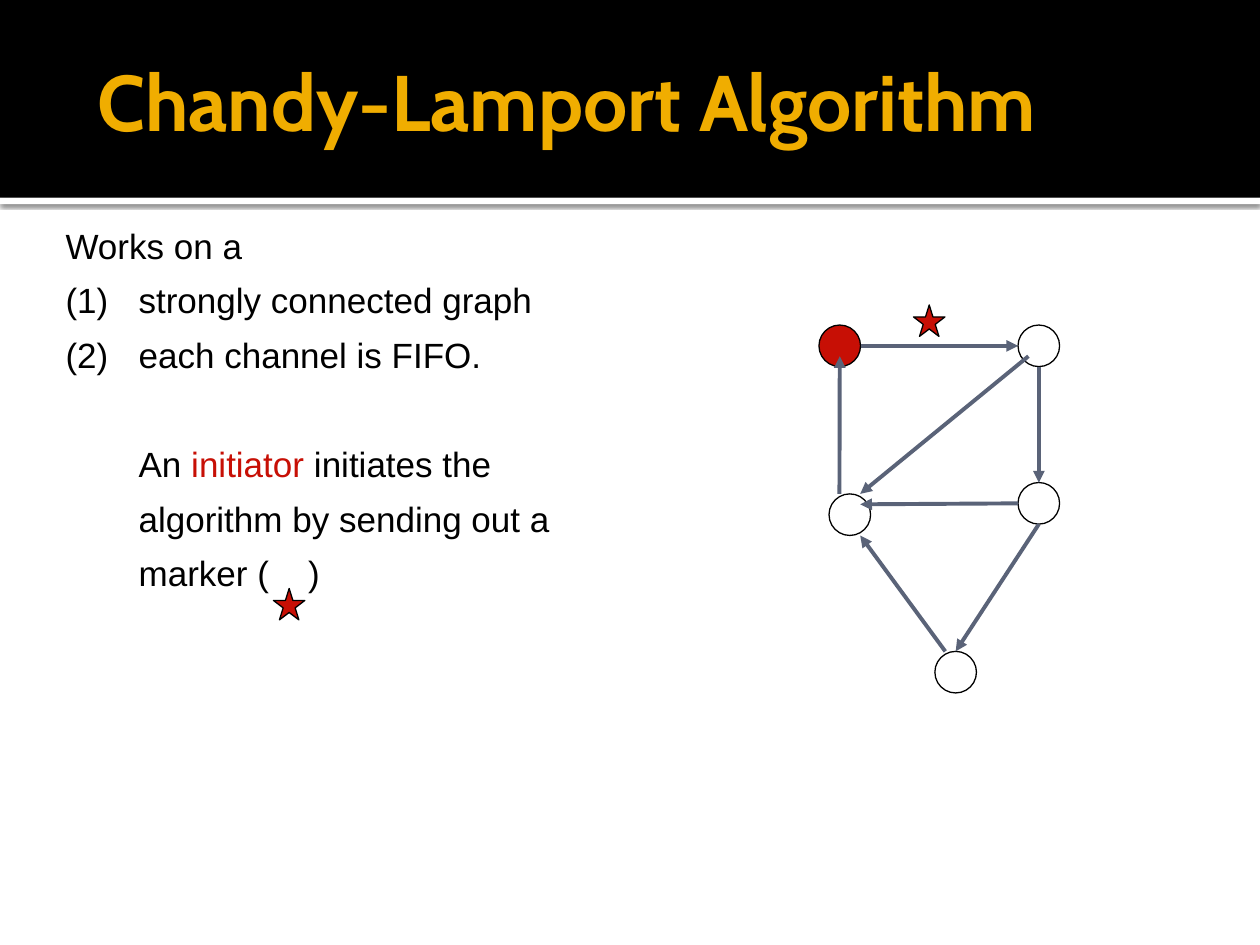
from dataclasses import dataclass

from lxml.etree import SubElement
from pptx import Presentation
from pptx.dml.color import RGBColor
from pptx.enum.shapes import MSO_CONNECTOR, MSO_SHAPE
from pptx.enum.text import MSO_ANCHOR, MSO_AUTO_SIZE, PP_ALIGN
from pptx.oxml import parse_xml
from pptx.oxml.ns import nsdecls, qn
from pptx.util import Inches, Pt


@dataclass(frozen=True)
class Theme:
    black: str = "000000"
    white: str = "FFFFFF"
    gold: str = "F0AD00"
    red: str = "C70F05"
    slate: str = "5A6378"
    title_font: str = "Cabin"
    body_font: str = "Arial"
    title_size: int = 45
    body_size: int = 20
    outline: float = 0.75
    arrow: float = 2.25


NODE_SIZE = 0.33
STAR_SIZE = 0.25
INDENT = 0.58
SHADOW = (
    f'<a:effectLst {nsdecls("a")}><a:outerShdw blurRad="31750" dist="10160" '
    'dir="5400000" algn="tl" rotWithShape="0"><a:srgbClr val="000000">'
    '<a:alpha val="60000"/></a:srgbClr></a:outerShdw></a:effectLst>'
)


def apply(target, values):
    for name, value in values.items():
        setattr(target, name, value)


class SlideBuilder:
    """Holds the theme and the current slide."""

    def __init__(self, theme, page):
        self.theme = theme
        self.page = page

    def shape(self, kind, left, top, width, height, fill=None, outlined=True):
        shape = self.page.shapes.add_shape(
            kind, Inches(left), Inches(top), Inches(width), Inches(height))
        shape.shadow.inherit = False
        if fill:
            shape.fill.solid()
            shape.fill.fore_color.rgb = RGBColor.from_string(fill)
        else:
            shape.fill.background()
        if outlined:
            shape.line.color.rgb = RGBColor.from_string(self.theme.black)
            shape.line.width = Pt(self.theme.outline)
        else:
            shape.line.fill.background()
        return shape

    def band(self, top, height, fill, depth, shadow=False):
        band = self.shape(MSO_SHAPE.RECTANGLE, 0, top, 10, height, fill, False)
        if shadow:
            properties = band._element.spPr
            properties.remove(properties.find(qn("a:effectLst")))
            properties.append(parse_xml(SHADOW))
        # Place the band behind the placeholders
        self.page.shapes._spTree.insert(2 + depth, band._element)

    def node(self, left, top, fill=None):
        return self.shape(MSO_SHAPE.OVAL, left, top, NODE_SIZE, NODE_SIZE, fill)

    def marker(self, left, top):
        self.shape(MSO_SHAPE.STAR_5_POINT, left, top, STAR_SIZE, STAR_SIZE, self.theme.red)

    def channel(self, source, source_at, target, target_at):
        """Draw an arrow between points given as fractions of each node's box."""
        ends = []
        for node, (across, down) in ((source, source_at), (target, target_at)):
            ends += [int(node.left + across * node.width), int(node.top + down * node.height)]
        arrow = self.page.shapes.add_connector(MSO_CONNECTOR.STRAIGHT, *ends)
        arrow.line.color.rgb = RGBColor.from_string(self.theme.slate)
        arrow.line.width = Pt(self.theme.arrow)
        SubElement(arrow.line._get_or_add_ln(), qn("a:tailEnd"), type="triangle")
        SubElement(arrow._element.spPr, qn("a:effectLst"))

    def placeholder(self, box, place, insets, anchor):
        sides = ("left", "top", "width", "height")
        apply(box, {side: Inches(value) for side, value in zip(sides, place)})
        margins = ("margin_left", "margin_top", "margin_right", "margin_bottom")
        apply(box.text_frame, {
            **{side: Inches(value) for side, value in zip(margins, insets)},
            "vertical_anchor": anchor, "word_wrap": True,
            "auto_size": MSO_AUTO_SIZE.NONE})
        return box.text_frame

    def span(self, para, text, font, size, color, bold=False, spacing=None):
        span = para.add_run()
        span.text = text
        apply(span.font, {"name": font, "size": Pt(size), "bold": bold})
        span.font.color.rgb = RGBColor.from_string(color)
        if spacing:
            span.font._element.set("spc", str(int(spacing * 100)))

    def title(self, text):
        frame = self.placeholder(self.page.shapes.title, (0.67, 0.17, 8.5, 1.25),
                                 (0.1, 0.05, 0.05, 0.05), MSO_ANCHOR.MIDDLE)
        para = frame.paragraphs[0]
        para.alignment = PP_ALIGN.LEFT
        self.span(para, text, self.theme.title_font, self.theme.title_size,
                  self.theme.gold, bold=True)

    def body(self, items):
        """Each item is (hanging, space before, spans of text, colour, spacing)."""
        frame = self.placeholder(self.page.placeholders[1], (0.42, 1.58, 4.58, 4.75),
                                 (0.1, 0.1, 0.1, 0.05), MSO_ANCHOR.TOP)
        for index, (hanging, before, spans) in enumerate(items):
            para = frame.add_paragraph() if index else frame.paragraphs[0]
            apply(para, {"alignment": PP_ALIGN.LEFT, "line_spacing": 1.3,
                         "space_before": Pt(before), "space_after": Pt(0)})
            properties = para._p.get_or_add_pPr()
            properties.set("marL", str(Inches(INDENT)))
            properties.set("indent", str(-Inches(INDENT) if hanging else 0))
            SubElement(properties, qn("a:buNone"))
            for text, color, spacing in spans:
                self.span(para, text, self.theme.body_font, self.theme.body_size,
                          color, spacing=spacing)


def main():
    deck = Presentation()
    deck.slide_width, deck.slide_height = Inches(10), Inches(7.5)
    theme = Theme()
    builder = SlideBuilder(theme, deck.slides.add_slide(deck.slide_layouts[1]))

    # Header
    builder.band(1.57, 0.05, theme.white, depth=0, shadow=True)
    builder.band(0, 1.57, theme.black, depth=1)
    builder.title("Chandy-Lamport Algorithm")

    # Explanation; the widened space leaves room for the marker star
    black = theme.black
    builder.body([
        (True, 0, [("Works on a", black, None)]),
        (True, 0, [("(1)\tstrongly connected graph", black, None)]),
        (True, 0, [("(2)\teach channel is FIFO.", black, None)]),
        (False, 31, [("An ", black, None),
                     ("initiator", theme.red, None),
                     (" initiates the algorithm by sending out a marker (", black, None),
                     (" ", black, 16.7),
                     (")", black, None)]),
    ])

    # Processes
    initiator = builder.node(6.5, 2.58, theme.red)
    right = builder.node(8.08, 3.83)
    left = builder.node(6.58, 3.92)
    upper = builder.node(8.08, 2.58)
    lower = builder.node(7.42, 5.17)

    # Channels
    for channel in (
        (initiator, (1, 0.5), upper, (0, 0.5)),
        (upper, (0.5, 1), right, (0.5, 0)),
        (right, (0, 0.5), left, (0.75, 0.25)),
        (left, (0.25, 0), initiator, (0.5, 0.75)),
        (upper, (0.25, 0.75), left, (0.75, 0)),
        (right, (0.5, 1), lower, (0.5, 0)),
        (lower, (0.25, 0), left, (0.75, 1)),
    ):
        builder.channel(*channel)

    # Markers: in the text and on the first channel
    builder.marker(2.17, 4.67)
    builder.marker(7.25, 2.42)

    deck.save("out.pptx")


if __name__ == "__main__":
    main()
